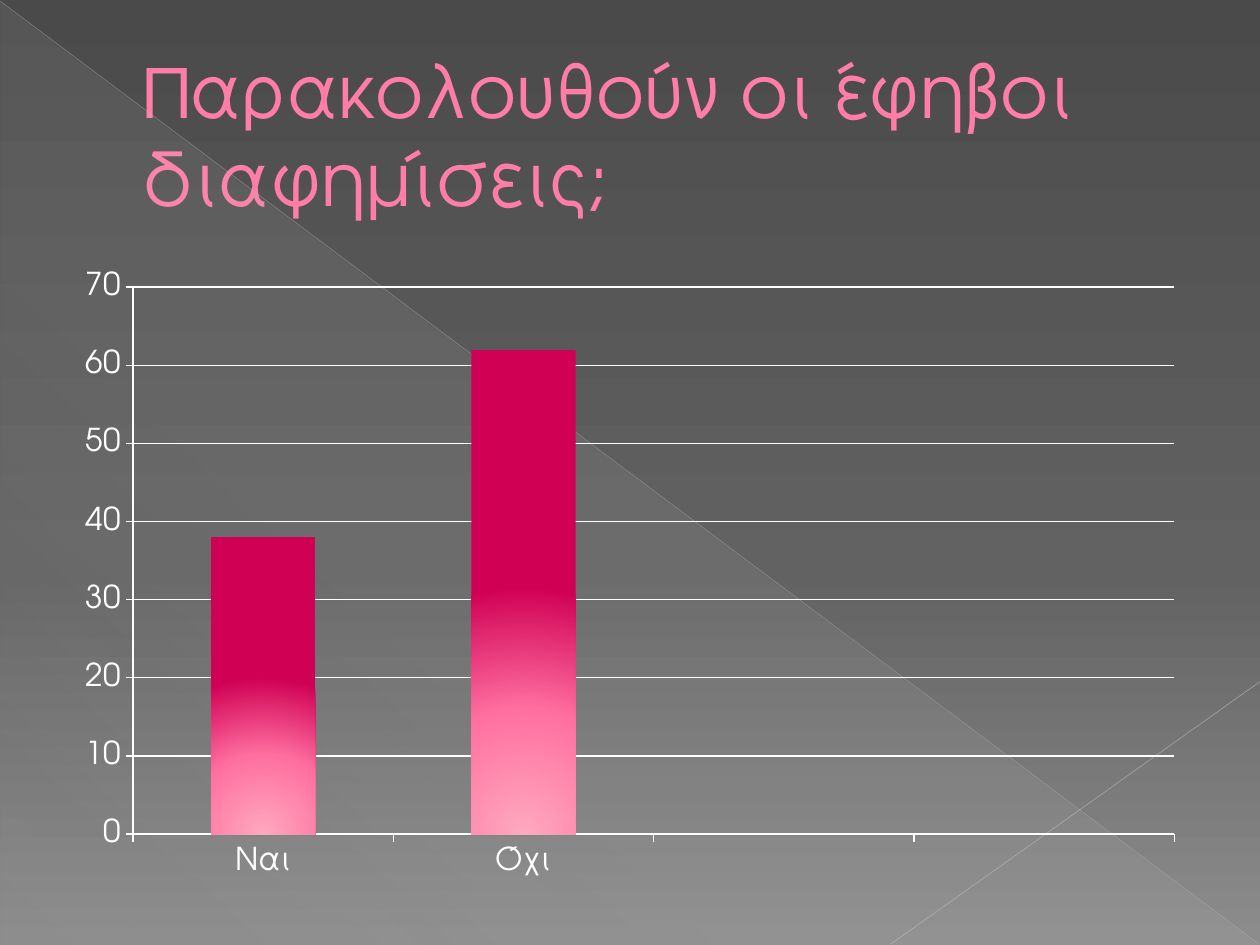
from lxml import etree
from pptx import Presentation
from pptx.chart.data import CategoryChartData
from pptx.dml.color import RGBColor
from pptx.enum.chart import XL_CHART_TYPE as ChartType, XL_TICK_MARK as Tick
from pptx.enum.shapes import MSO_CONNECTOR as Connector, MSO_SHAPE as Shape
from pptx.enum.text import MSO_ANCHOR as Anchor, MSO_AUTO_SIZE as AutoSize, PP_ALIGN as Align
from pptx.oxml.ns import qn
from pptx.util import Cm, Pt

FONT = "TeX Gyre Adventor"
WHITE = RGBColor(0xFF, 0xFF, 0xFF)
TITLE_PINK = RGBColor(0xFF, 0x7D, 0xA7)
TITLE_EDGE = RGBColor(0xB1, 0x27, 0x61)
DARK_GREY = RGBColor(0x4A, 0x4A, 0x4A)
MID_GREY = RGBColor(0x62, 0x62, 0x62)
LIGHT_GREY = RGBColor(0x8C, 0x8C, 0x8C)
VEIL = RGBColor(0xD2, 0xD2, 0xD2)
LONG_DIAGONAL = RGBColor(0xBF, 0xBF, 0xBF)
SHORT_DIAGONAL = RGBColor(0xC6, 0xC6, 0xC6)
BAR_LIGHT = RGBColor(0xFF, 0xA8, 0xC0)
BAR_PINK = RGBColor(0xFF, 0x70, 0xA0)
BAR_DEEP = RGBColor(0xD0, 0x00, 0x55)


def add_color(parent, color, opacity=100):
    clr = etree.SubElement(parent, qn("a:srgbClr"), val=str(color))
    if opacity < 100:
        etree.SubElement(clr, qn("a:alpha"), val=str(opacity * 1000))


def set_gradient(fill, owner, stops, angle=None):
    """Linear gradient at an angle, or circles around the bottom centre."""
    fill.solid()
    solid = owner.find(".//" + qn("a:solidFill"))
    grad = etree.Element(qn("a:gradFill"), rotWithShape="1")
    stop_list = etree.SubElement(grad, qn("a:gsLst"))
    for position, color, opacity in stops:
        stop = etree.SubElement(stop_list, qn("a:gs"), pos=str(position * 1000))
        add_color(stop, color, opacity)
    if angle is None:
        circle = etree.SubElement(grad, qn("a:path"))
        circle.set("path", "circle")
        etree.SubElement(circle, qn("a:fillToRect"), l="50000", t="100000", r="50000", b="0")
    else:
        etree.SubElement(grad, qn("a:lin"), ang=str(angle * 60000), scaled="0")
    solid.getparent().replace(solid, grad)


prs = Presentation()
prs.slide_width, prs.slide_height = Cm(25.4), Cm(19.05)
slide = prs.slides.add_slide(prs.slide_layouts[5])

# Background
set_gradient(slide.background.fill, slide.element,
             [(0, DARK_GREY, 100), (60, MID_GREY, 100), (100, LIGHT_GREY, 100)], 90)

# Translucent triangle and diagonals
veil = slide.shapes.add_shape(Shape.RIGHT_TRIANGLE, Cm(0.02), Cm(0.04), Cm(25.36), Cm(19))
veil.shadow.inherit = False
veil.line.fill.background()
set_gradient(veil.fill, veil.element.spPr,
             [(0, VEIL, 10), (70, VEIL, 8), (100, VEIL, 1)], 133)

for x1, y1, x2, y2, color, width, opacity in [
    (0, 0.02, 25.38, 19.03, LONG_DIAGONAL, 0.39, 35),
    (25.4, 13.74, 17.96, 19.03, SHORT_DIAGONAL, 0.47, 45),
]:
    diagonal = slide.shapes.add_connector(Connector.STRAIGHT, Cm(x1), Cm(y1), Cm(x2), Cm(y2))
    diagonal.line.width = Pt(width)
    diagonal.line.color.rgb = color
    solid = diagonal.element.spPr.find(".//" + qn("a:solidFill"))
    solid.remove(solid[0])
    add_color(solid, color, opacity)
    etree.SubElement(diagonal.element.spPr, qn("a:effectLst"))

# Title
title = slide.shapes.title
title.left, title.top, title.width, title.height = Cm(1.27), Cm(0.74), Cm(22.86), Cm(3.89)
frame = title.text_frame
frame.text = "Παρακολουθούν οι έφηβοι διαφημίσεις;"
frame.word_wrap = True
frame.auto_size = AutoSize.NONE
frame.vertical_anchor = Anchor.MIDDLE
heading = frame.paragraphs[0]
heading.alignment = Align.LEFT
heading_props = heading._p.get_or_add_pPr()
heading_props.set("marL", str(Cm(1.35)))
heading_props.set("indent", "0")
heading.font.name = FONT
heading.font.size = Pt(42)
heading.font.color.rgb = TITLE_PINK
edge = etree.Element(qn("a:ln"), w=str(Pt(0.5)))
add_color(etree.SubElement(edge, qn("a:solidFill")), TITLE_EDGE)
heading.runs[0]._r.get_or_add_rPr().insert(0, edge)

# Answers chart
answers = CategoryChartData()
answers.categories = ["Ναι", "Όχι", "", ""]
answers.add_series("Series 1", [38, 62, None, None])
chart = slide.shapes.add_chart(ChartType.COLUMN_STACKED, Cm(1.27), Cm(5.23),
                               Cm(22.86), Cm(12.7), answers).chart
chart.has_legend = False
chart.has_title = False
chart.font.name = FONT
chart.font.size = Pt(18)
chart.font.color.rgb = WHITE

plot = chart.plots[0]
plot.gap_width = 150
plot.overlap = 100
plot.vary_by_categories = False
bars = plot.series[0]
set_gradient(bars.format.fill, bars._element,
             [(0, BAR_LIGHT, 100), (50, BAR_PINK, 100), (100, BAR_DEEP, 100)])

value_axis = chart.value_axis
value_axis.minimum_scale, value_axis.maximum_scale, value_axis.major_unit = 0, 70, 10
value_axis.has_major_gridlines = True
for axis in (chart.category_axis, value_axis):
    axis.major_tick_mark = Tick.OUTSIDE
    axis.minor_tick_mark = Tick.NONE
for ruled in (chart.category_axis, value_axis, value_axis.major_gridlines):
    ruled.format.line.color.rgb = WHITE
    ruled.format.line.width = Pt(0.75)

prs.save("out.pptx")
